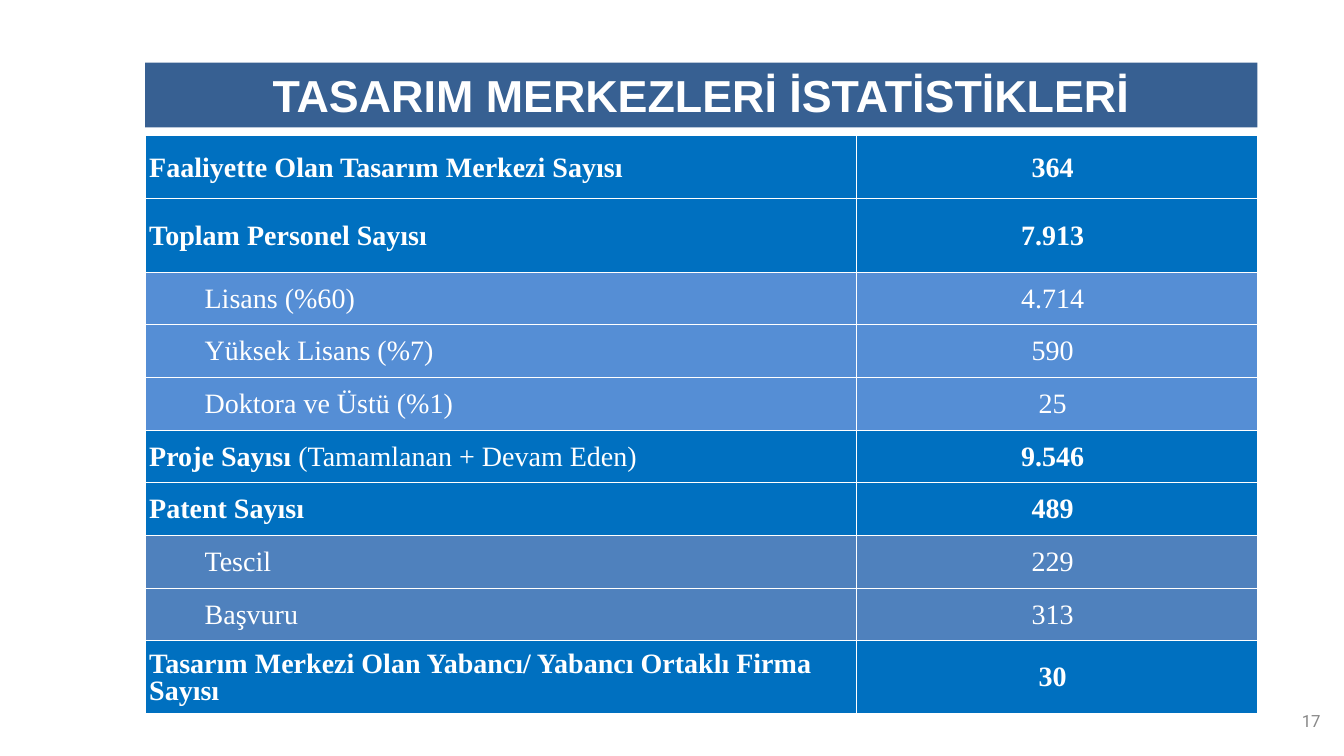
import pptx
import pptx.dml.color
import pptx.enum.text
import pptx.oxml
import pptx.oxml.ns
import pptx.util

SLIDE_WIDTH = pptx.util.Inches(13.33)
SLIDE_HEIGHT = pptx.util.Inches(7.5)
ALIGN = pptx.enum.text.PP_ALIGN
MIDDLE = pptx.enum.text.MSO_ANCHOR.MIDDLE

WHITE, NAVY, GREY = "FFFFFF", "376092", "888888"
MAIN, STAFF, PATENT = "0070C0", "558ED5", "4F81BD"
LEFT, LABEL_WIDTH, VALUE_WIDTH = 10.8, 52.89, 29.86
HAIRLINE, HEADER_RULE = 0.23, 0.75
SHORT, MEDIUM, TALL = 6.97, 8.4, 9.65

STATISTICS = [
    ("Faaliyette Olan Tasarım Merkezi Sayısı", "", "364", MAIN, MEDIUM),
    ("Toplam Personel Sayısı", "", "7.913", MAIN, TALL),
    ("", "Lisans (%60)", "4.714", STAFF, SHORT),
    ("", "Yüksek Lisans (%7)", "590", STAFF, SHORT),
    ("", "Doktora ve Üstü (%1)", "25", STAFF, SHORT),
    ("Proje Sayısı ", "(Tamamlanan + Devam Eden)", "9.546", MAIN, SHORT),
    ("Patent Sayısı", "", "489", MAIN, SHORT),
    ("", "Tescil", "229", PATENT, SHORT),
    ("", "Başvuru", "313", PATENT, SHORT),
    ("Tasarım Merkezi Olan Yabancı/ Yabancı Ortaklı Firma Sayısı", "", "30", MAIN, TALL),
]


def across(percent):
    """Return a share of the slide's width."""
    return round(SLIDE_WIDTH * percent / 100)


def down(percent):
    """Return a share of the slide's height."""
    return round(SLIDE_HEIGHT * percent / 100)


def paint(fill, color):
    """Give a fill one solid colour."""
    fill.solid()
    fill.fore_color.rgb = pptx.dml.color.RGBColor.from_string(color)


def write(paragraph, text, *, size=20, font="Times New Roman", color=WHITE,
          bold=False, align=ALIGN.LEFT, spacing=None):
    """Append formatted text to a paragraph."""
    paragraph.alignment = align
    if spacing:
        paragraph.line_spacing = spacing
    run = paragraph.add_run()
    run.text = text
    run.font.name = font
    run.font.size = pptx.util.Pt(size)
    run.font.bold = bold
    paint(run.font.fill, color)


def add_banner(slide, text):
    """Turn the title placeholder into the coloured banner."""
    banner = slide.shapes.title
    banner.left, banner.top = across(LEFT), down(8.3)
    banner.width, banner.height = across(LABEL_WIDTH + VALUE_WIDTH), down(8.55)
    paint(banner.fill, NAVY)
    frame = banner.text_frame
    frame.auto_size = pptx.enum.text.MSO_AUTO_SIZE.NONE
    frame.vertical_anchor = MIDDLE
    write(frame.paragraphs[0], text, size=32, font="Arial", bold=True, align=ALIGN.CENTER)


def rule_cell(cell, top, bottom):
    """Draw white borders around a table cell."""
    widths = {"lnL": HAIRLINE, "lnR": HAIRLINE, "lnT": top, "lnB": bottom}
    for position, (side, width) in enumerate(widths.items()):
        border = pptx.oxml.parse_xml(
            f'<a:{side} {pptx.oxml.ns.nsdecls("a")} w="{pptx.util.Pt(width)}">'
            f'<a:solidFill><a:srgbClr val="{WHITE}"/></a:solidFill></a:{side}>')
        cell._tc.get_or_add_tcPr().insert(position, border)


def fill_cell(cell, parts, color, align, row):
    """Format one cell and write its bold and plain parts."""
    paint(cell.fill, color)
    cell.vertical_anchor = MIDDLE
    cell.margin_left = cell.margin_bottom = pptx.util.Inches(0.04)
    cell.margin_top = pptx.util.Inches(0.08)
    cell.margin_right = pptx.util.Inches(0.12)
    rule_cell(cell, HEADER_RULE if row == 1 else HAIRLINE,
              HEADER_RULE if row == 0 else HAIRLINE)
    for text, bold in parts:
        if text:
            write(cell.text_frame.paragraphs[0], text, bold=bold, align=align, spacing=0.86)


def indent(paragraph):
    """Set a paragraph in as a second-level entry."""
    paragraph.level = 1
    properties = paragraph._p.get_or_add_pPr()
    properties.set("marL", str(pptx.util.Inches(0.55)))
    properties.set("indent", "0")


def add_statistics(slide):
    """Add the table of design centre statistics."""
    height = sum(entry[-1] for entry in STATISTICS)
    table = slide.shapes.add_table(
        len(STATISTICS), 2, across(LEFT), down(17.9),
        across(LABEL_WIDTH + VALUE_WIDTH), down(height)).table
    for column, width in zip(table.columns, (LABEL_WIDTH, VALUE_WIDTH)):
        column.width = across(width)
    for row, (heading, detail, value, color, share) in enumerate(STATISTICS):
        table.rows[row].height = down(share)
        label_cell, value_cell = table.rows[row].cells
        fill_cell(label_cell, [(heading, True), (detail, False)], color, ALIGN.LEFT, row)
        fill_cell(value_cell, [(value, bool(heading))], color, ALIGN.CENTER, row)
        if not heading:
            indent(label_cell.text_frame.paragraphs[0])


def add_page_number(slide, number):
    """Add the page number in the lower right corner."""
    frame = slide.shapes.add_textbox(across(76.5), down(92.7), across(22.5), down(5.3)).text_frame
    frame.word_wrap = True
    frame.vertical_anchor = MIDDLE
    write(frame.paragraphs[0], number, size=12, font="Roboto", color=GREY, align=ALIGN.RIGHT)


def main():
    """Build and save the slide."""
    deck = pptx.Presentation()
    deck.slide_width, deck.slide_height = SLIDE_WIDTH, SLIDE_HEIGHT
    slide = deck.slides.add_slide(deck.slide_layouts.get_by_name("Title Only"))
    paint(slide.background.fill, WHITE)
    add_page_number(slide, "17")
    add_banner(slide, "TASARIM MERKEZLERİ İSTATİSTİKLERİ")
    add_statistics(slide)
    deck.save("out.pptx")


if __name__ == "__main__":
    main()
